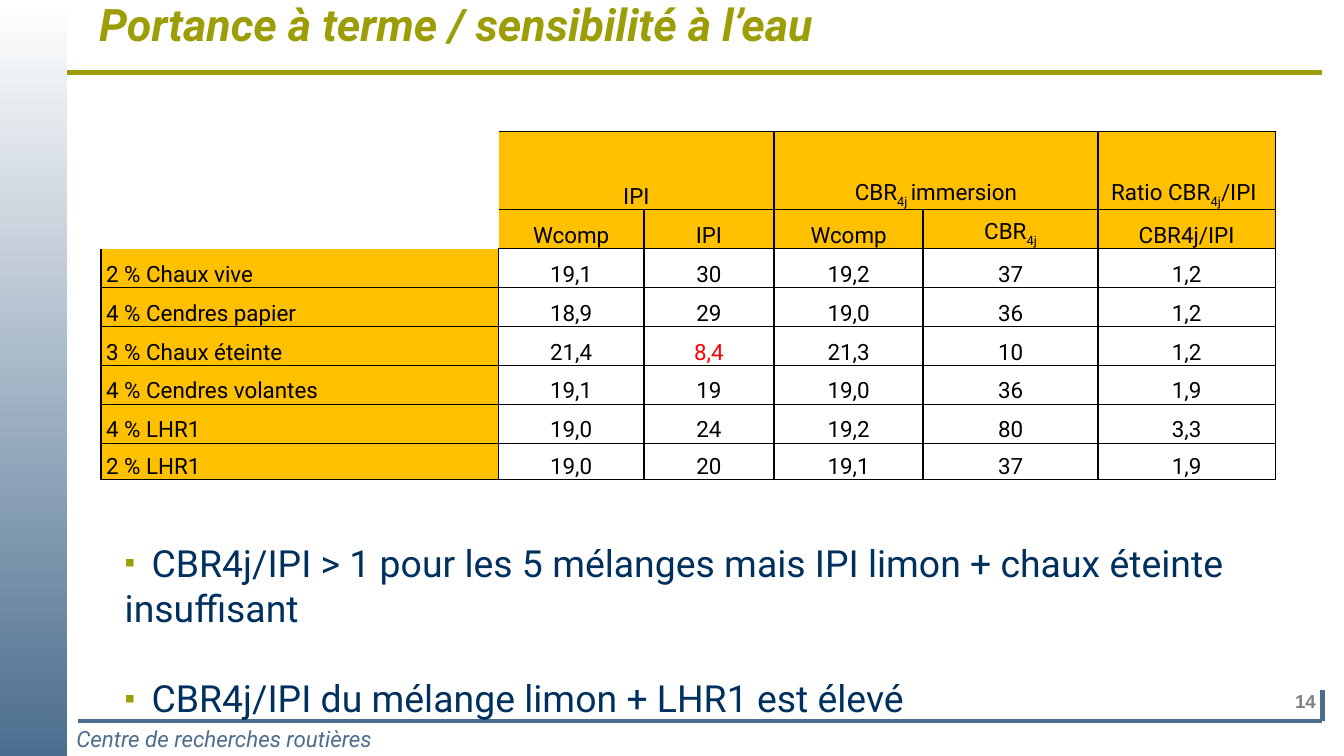
from pptx import Presentation
from pptx.dml.color import RGBColor
from pptx.enum.shapes import MSO_CONNECTOR, MSO_SHAPE
from pptx.enum.text import MSO_ANCHOR, PP_ALIGN
from pptx.oxml.ns import qn
from pptx.util import Inches, Pt
from lxml.etree import SubElement

OLIVE, STEEL, NAVY, GOLD = "9D9D08", "4C6E8E", "00305E", "FFC000"
BLACK, RED, GREY, WHITE = "000000", "FF0000", "7F7F7F", "FFFFFF"

COLS = [2.96, 1.08, 0.97, 1.11, 1.3, 1.32]
ROWS = [0.58] + [0.29] * 6 + [0.27]
DATA = [
    ["", "IPI", "", "CBR_4j _immersion", "", "Ratio CBR_4j_/IPI "],
    ["", "Wcomp", "IPI", "Wcomp", "CBR_4j", "CBR4j/IPI"],
    ["2 % Chaux vive", "19,1", "30", "19,2", "37", "1,2"],
    ["4 % Cendres papier", "18,9", "29", "19,0", "36", "1,2"],
    ["3 % Chaux éteinte", "21,4", "8,4", "21,3", "10", "1,2"],
    ["4 % Cendres volantes", "19,1", "19", "19,0", "36", "1,9"],
    ["4 % LHR1", "19,0", "24", "19,2", "80", "3,3"],
    ["2 % LHR1", "19,0", "20", "19,1", "37", "1,9"],
]
POINTS = [
    ("CBR4j/IPI > 1 pour les 5 mélanges mais IPI limon + chaux éteinte", True, 0),
    ("insuffisant", False, 0),
    ("CBR4j/IPI du mélange limon + LHR1 est élevé", True, 24.5),
]


def color(code):
    return RGBColor.from_string(code)


def style(para, size, code, name="Roboto", bold=False, italic=False):
    font = para.font
    font.size, font.name = Pt(size), name
    font.bold, font.italic = bold, italic
    font.color.rgb = color(code)


def add_line(slide, x1, y1, x2, y2, code, width):
    line = slide.shapes.add_connector(
        MSO_CONNECTOR.STRAIGHT, Inches(x1), Inches(y1), Inches(x2), Inches(y2))
    line.line.color.rgb = color(code)
    line.line.width = Pt(width)
    SubElement(line._element.spPr, qn("a:effectLst"))


def add_box(slide, x, y, w, h, wrap=True):
    box = slide.shapes.add_textbox(Inches(x), Inches(y), Inches(w), Inches(h))
    frame = box.text_frame
    frame.word_wrap = wrap
    return frame


def add_frame(slide, w, h):
    right, base = w - 0.16, h - 0.26
    add_line(slide, 0.17, 0.54, right, 0.54, OLIVE, 2.25)
    add_line(slide, right, base - 0.23, right, base, STEEL, 2.25)
    add_line(slide, right, base, 0.58, base, STEEL, 2.5)

    number = add_box(slide, w - 0.48, h - 0.52, 0.31, 0.25, False)
    number.margin_left = number.margin_right = Inches(0.04)
    number.margin_top = number.margin_bottom = Inches(0.04)
    number.vertical_anchor = MSO_ANCHOR.MIDDLE
    para = number.paragraphs[0]
    para.text = "14"
    para.alignment = PP_ALIGN.RIGHT
    para.line_spacing = 0.9
    style(para, 10, GREY, "Arial", bold=True)

    para = add_box(slide, 0.47, h - 0.28, 8.86, 0.3).paragraphs[0]
    para.text = "Centre de recherches routières"
    style(para, 12, STEEL, italic=True)

    band = slide.shapes.add_shape(
        MSO_SHAPE.RECTANGLE, 0, 0, Inches(0.5), Inches(h))
    band.shadow.inherit = False
    band.line.fill.background()
    band.fill.gradient()
    band.fill.gradient_angle = 270
    for stop, code, place in zip(band.fill.gradient_stops, (WHITE, STEEL), (0, 1)):
        stop.color.rgb = color(code)
        stop.position = place


def add_title(slide, x, y, w, h):
    frame = add_box(slide, x, y, w, h)
    frame.vertical_anchor = MSO_ANCHOR.TOP
    para = frame.paragraphs[0]
    para.text = "Portance à terme / sensibilité à l’eau"
    para.line_spacing = 0.8
    style(para, 24, OLIVE, bold=True, italic=True)


def set_edges(cell, sides):
    props = cell._tc.get_or_add_tcPr()
    for side in "LRTB":
        edge = SubElement(props, qn("a:ln" + side), w=str(Pt(1)))
        if side in sides:
            fill = SubElement(edge, qn("a:solidFill"))
            SubElement(fill, qn("a:srgbClr"), val=BLACK)
        else:
            SubElement(edge, qn("a:noFill"))


def edges(row, col):
    if row < 2 and col == 0:
        return ""
    if row < 2 and col == 1:
        return "RTB"
    if row == 2 and col == 0:
        return "LRB"
    return "LRTB"


def fill_cell(cell, row, col, text):
    set_edges(cell, edges(row, col))
    if (row < 2) != (col == 0):
        cell.fill.solid()
        cell.fill.fore_color.rgb = color(GOLD)
    else:
        cell.fill.background()
    cell.margin_left = cell.margin_right = Inches(0.04)
    cell.margin_top = cell.margin_bottom = 0
    cell.vertical_anchor = MSO_ANCHOR.BOTTOM
    para = cell.text_frame.paragraphs[0]
    para.alignment = PP_ALIGN.CENTER if col else PP_ALIGN.LEFT
    para.line_spacing = 1.15
    style(para, 12, RED if text == "8,4" else BLACK)
    if not text:
        return
    for i, part in enumerate(text.split("_")):
        run = para.add_run()
        run.text = part
        if i % 2:
            run.font._element.set("baseline", "-25000")


def add_grid(slide, x, y):
    table = slide.shapes.add_table(
        len(ROWS), len(COLS), Inches(x), Inches(y),
        Inches(sum(COLS)), Inches(sum(ROWS))).table
    table.first_row = table.horz_banding = False
    for col, width in zip(table.columns, COLS):
        col.width = Inches(width)
    for row, height in zip(table.rows, ROWS):
        row.height = Inches(height)
    for r, line in enumerate(DATA):
        for c, text in enumerate(line):
            fill_cell(table.cell(r, c), r, c, text)
    for c in (1, 3):
        table.cell(0, c).merge(table.cell(0, c + 1))


def add_bullet(para):
    props = para._p.get_or_add_pPr()
    props.set("marL", str(Inches(0.2)))
    props.set("indent", str(Inches(-0.2)))
    tint = SubElement(props, qn("a:buClr"))
    SubElement(tint, qn("a:srgbClr"), val=OLIVE)
    SubElement(props, qn("a:buSzPct"), val="80000")
    SubElement(props, qn("a:buFont"), typeface="Arial")
    SubElement(props, qn("a:buChar"), char="▪")


def add_points(slide, x, y, w, h):
    frame = add_box(slide, x, y, w, h)
    for i, (text, mark, gap) in enumerate(POINTS):
        para = frame.add_paragraph() if i else frame.paragraphs[0]
        para.text = text
        if mark:
            add_bullet(para)
        if gap:
            para.space_before = Pt(gap)
        style(para, 20, NAVY)


def main():
    deck = Presentation()
    w = 10
    h = w * 9 / 16
    deck.slide_width, deck.slide_height = Inches(w), Inches(h)
    slide = deck.slides.add_slide(deck.slide_layouts[6])
    add_frame(slide, w, h)
    add_title(slide, 0.64, 0, 9.26, 0.51)
    add_grid(slide, 0.75, 0.98)
    add_points(slide, 0.83, 3.97, 9.06, 1.45)
    deck.save("out.pptx")


if __name__ == "__main__":
    main()
